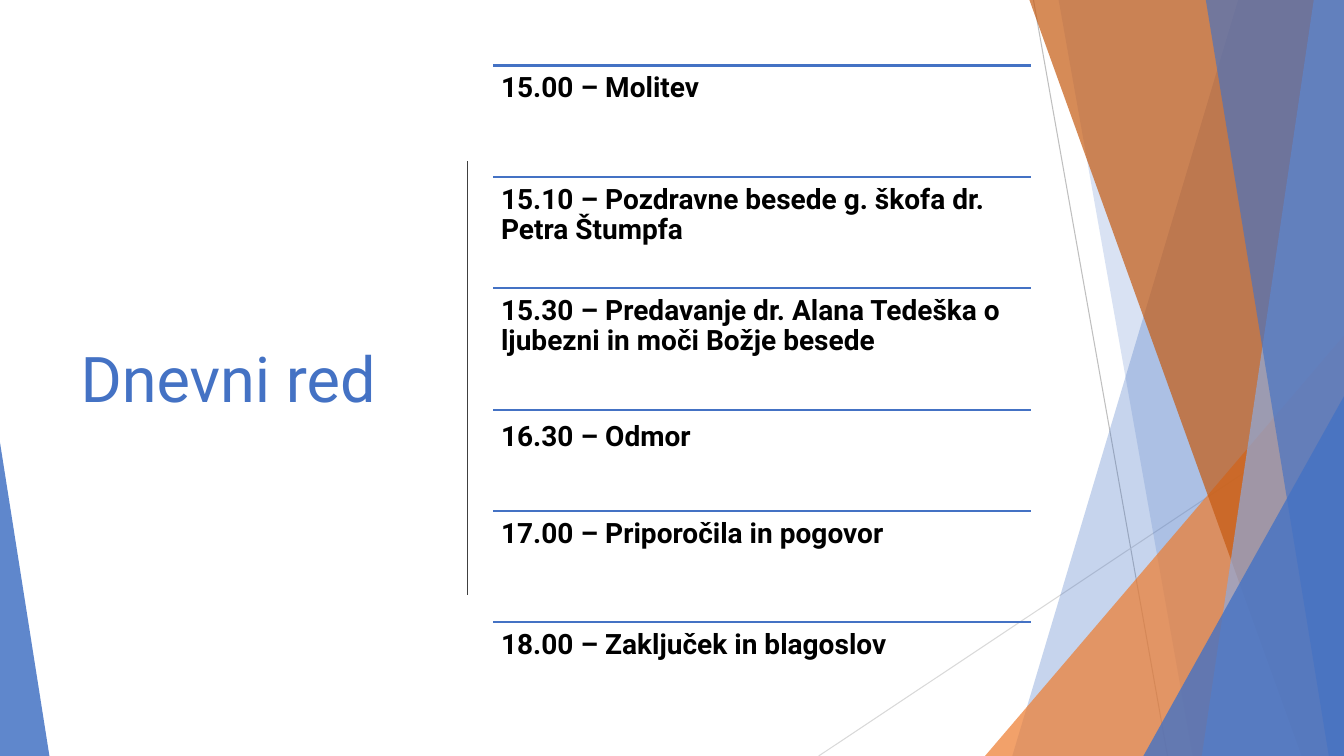
from dataclasses import dataclass

from lxml.etree import SubElement
from pptx import Presentation
from pptx.dml.color import RGBColor
from pptx.enum.shapes import MSO_CONNECTOR, MSO_SHAPE
from pptx.enum.text import MSO_ANCHOR
from pptx.oxml.ns import qn
from pptx.shapes.autoshape import Shape
from pptx.slide import Slide
from pptx.util import Inches, Pt

WIDTH, HEIGHT = 13.33, 7.5
FONT = "Roboto"
BLUE, ORANGE, RUST, PALE_BLUE = "4472C4", "ED7D31", "C55A11", "8FAADC"
DARK_GREY = "404040"

AGENDA_LEFT, AGENDA_TOP = 4.89, 0.65
AGENDA_WIDTH, ROW_PITCH = 5.34, 1.105


@dataclass
class Band:
    """A quadrilateral that runs from a slanted left edge to the slide's right edge."""
    top_x: float
    bottom_x: float
    color: str
    opacity: int


@dataclass
class Wedge:
    """A right triangle standing on the slide's bottom edge."""
    left: float
    top: float
    width: float
    apex: float
    color: str
    opacity: int


@dataclass
class AgendaItem:
    text: str
    rule_shift: float = 0
    text_shift: float = 0


DECORATION = [
    Band(12.28, 10.04, BLUE, 30),
    Band(10.5, 11.83, BLUE, 20),
    Wedge(9.77, 3.33, 3.56, 1, ORANGE, 72),
    Band(10.21, 12.91, RUST, 70),
    Band(13.03, 11.92, PALE_BLUE, 70),
    Band(11.96, 13.18, BLUE, 65),
    Wedge(11.34, 3.93, 1.99, 1, BLUE, 80),
    Wedge(0, 4.39, 0.49, 0, BLUE, 85),
]

AGENDA = [
    AgendaItem("15.00 – Molitev"),
    AgendaItem("15.10 – Pozdravne besede g. škofa dr. Petra Štumpfa"),
    AgendaItem("15.30 – Predavanje dr. Alana Tedeška o ljubezni in moči Božje besede"),
    AgendaItem("16.30 – Odmor", rule_shift=0.1, text_shift=0.14),
    AgendaItem("17.00 – Priporočila in pogovor"),
    AgendaItem("18.00 – Zaključek in blagoslov"),
]


def rgb(color: str) -> RGBColor:
    return RGBColor.from_string(color)


def add_line(s: Slide, x1: float, y1: float, x2: float, y2: float,
             color: str, width: float) -> None:
    line = s.shapes.add_connector(MSO_CONNECTOR.STRAIGHT, Inches(x1), Inches(y1),
                                  Inches(x2), Inches(y2))
    line.line.color.rgb = rgb(color)
    line.line.width = Pt(width)
    SubElement(line._element.spPr, qn("a:effectLst"))


def paint(sp: Shape, color: str, opacity: int) -> None:
    """Give a shape a translucent fill with no outline or shadow."""
    sp.shadow.inherit = False
    sp.line.fill.background()
    sp.fill.solid()
    sp.fill.fore_color.rgb = rgb(color)
    fill_color = sp._element.spPr.find(qn("a:solidFill"))[0]
    SubElement(fill_color, qn("a:alpha"), val=str(opacity * 1000))


def add_band(s: Slide, band: Band) -> None:
    builder = s.shapes.build_freeform(Inches(band.top_x), 0)
    corners = [(WIDTH, 0), (WIDTH, HEIGHT), (band.bottom_x, HEIGHT)]
    builder.add_line_segments([(Inches(x), Inches(y)) for x, y in corners], close=True)
    paint(builder.convert_to_shape(), band.color, band.opacity)


def add_wedge(s: Slide, wedge: Wedge) -> None:
    sp = s.shapes.add_shape(MSO_SHAPE.ISOSCELES_TRIANGLE, Inches(wedge.left),
                            Inches(wedge.top), Inches(wedge.width),
                            Inches(HEIGHT - wedge.top))
    sp.adjustments[0] = wedge.apex
    paint(sp, wedge.color, wedge.opacity)


def add_text(s: Slide, text: str, left: float, top: float, width: float, height: float,
             size: float, color: str, bold: bool = False) -> Shape:
    sp = s.shapes.add_textbox(Inches(left), Inches(top), Inches(width), Inches(height))
    tf = sp.text_frame
    tf.word_wrap = True
    p = tf.paragraphs[0]
    r = p.add_run()
    r.text = text
    r.font.name = FONT
    r.font.size = Pt(size)
    r.font.bold = bold
    r.font.color.rgb = rgb(color)
    return sp


def add_agenda_item(s: Slide, item: AgendaItem, top: float) -> None:
    rule_y = top + item.rule_shift
    add_line(s, AGENDA_LEFT, rule_y, AGENDA_LEFT + AGENDA_WIDTH, rule_y, BLUE, 1.5)
    sp = add_text(s, item.text, AGENDA_LEFT, top + item.text_shift, AGENDA_WIDTH,
                  ROW_PITCH, 20, "000000", bold=True)
    tf = sp.text_frame
    tf.margin_left = tf.margin_right = tf.margin_top = tf.margin_bottom = Inches(0.08)
    tf.paragraphs[0].line_spacing = 0.9


def main() -> None:
    prs = Presentation()
    prs.slide_width, prs.slide_height = Inches(WIDTH), Inches(HEIGHT)
    s = prs.slides.add_slide(prs.slide_layouts[6])

    add_line(s, 10.25, 0, 11.58, HEIGHT, "BFBFBF", 0.75)
    add_line(s, WIDTH, 4.03, 8.12, HEIGHT, "D9D9D9", 0.75)
    for piece in DECORATION:
        if isinstance(piece, Band):
            add_band(s, piece)
        else:
            add_wedge(s, piece)

    add_line(s, 4.64, 1.6, 4.64, 5.9, DARK_GREY, 0.75)
    title = add_text(s, "Dnevni red", 0.7, 0.89, 3.68, 5.71, 45, BLUE)
    title.text_frame.vertical_anchor = MSO_ANCHOR.MIDDLE

    for i, item in enumerate(AGENDA):
        add_agenda_item(s, item, AGENDA_TOP + i * ROW_PITCH)

    prs.save("out.pptx")


if __name__ == "__main__":
    main()
